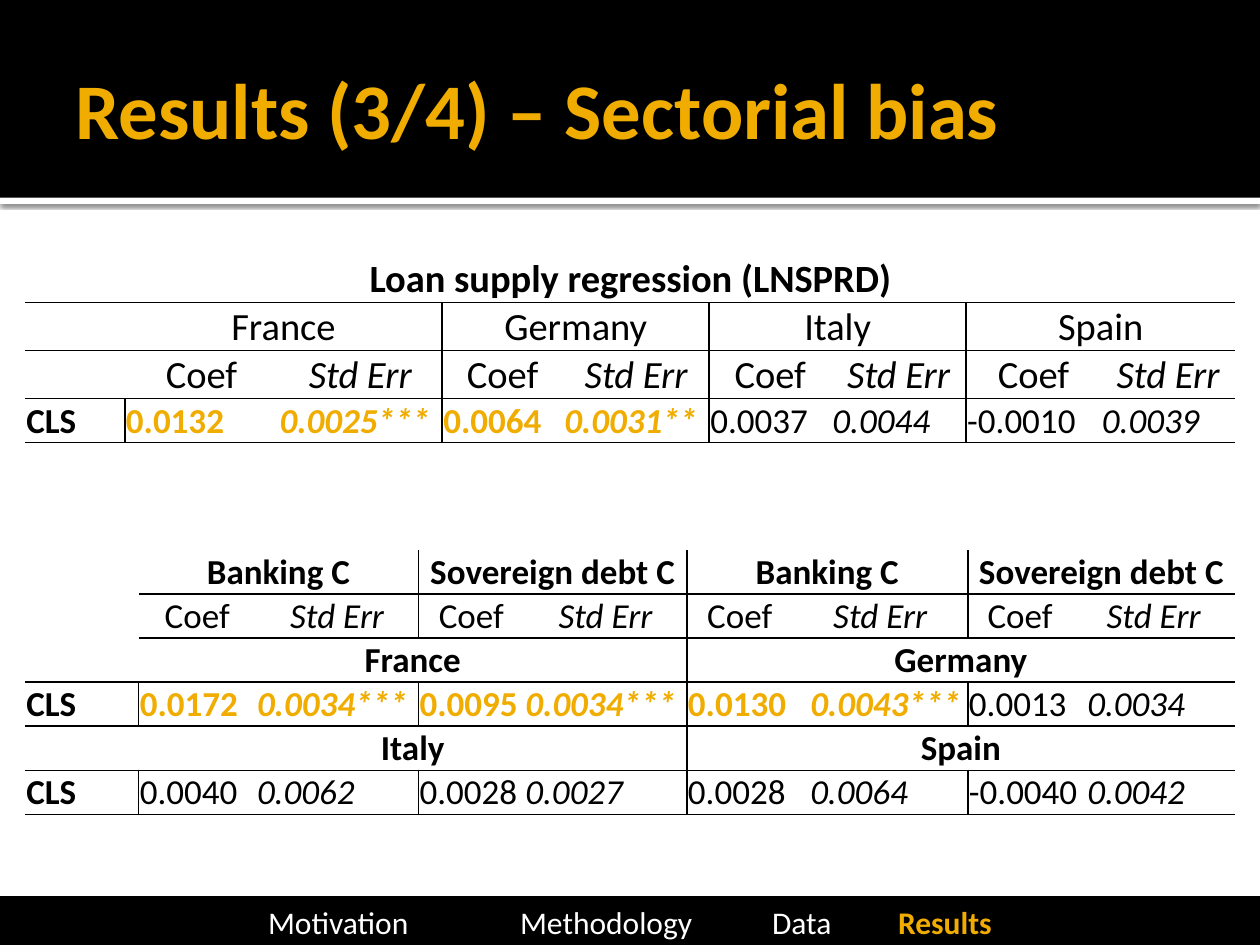
from pptx import Presentation
from pptx.dml.color import RGBColor
from pptx.enum.shapes import MSO_SHAPE
from pptx.enum.text import MSO_ANCHOR, PP_ALIGN
from pptx.oxml import parse_xml
from pptx.oxml.ns import nsdecls
from pptx.util import Pt

RECTANGLE = MSO_SHAPE.RECTANGLE
MIDDLE, BOTTOM = MSO_ANCHOR.MIDDLE, MSO_ANCHOR.BOTTOM
LEFT, CENTER = PP_ALIGN.LEFT, PP_ALIGN.CENTER

THEME = {
    "font": "Calibri", "black": "000000", "white": "FFFFFF", "accent": "F0AD00",
    "title": 45, "heading": 22, "body": 20, "footer": 18, "rule": 1,
}
NO_STYLE = "{2D5ABB26-0587-4C30-8999-92F81FD0307C}"

TITLE = "Results (3/4) – Sectorial bias"
SECTIONS = ["Motivation", "Methodology", "Data", "Results"]
MEASURES = [("Coef", ""), ("Std Err", "i")] * 4
CRISES = [("Banking C", "b"), ("Sovereign debt C", "b")] * 2

# Style letters: b bold, i italic, a accent colour.
LOAN_SUPPLY = {
    "left": 14.4, "top": 145.6,
    "widths": [56.9, 87.8, 93.6, 69.1, 83.5, 69.8, 77, 77, 77],
    "heights": [27.4, 27.4, 27.4, 25.2],
    "sizes": ["heading", "heading", "heading", "body"],
    "groups": [1, 3, 5, 7], "corner_rows": 0,
    "rows": [
        ([9], [("Loan supply regression (LNSPRD)", "b")]),
        ([1, 2, 2, 2, 2], [("", ""), ("France", ""), ("Germany", ""), ("Italy", ""), ("Spain", "")]),
        ([1] * 9, [("", "")] + MEASURES),
        ([1] * 9, [("CLS", "b"), ("0.0132", "ba"), ("0.0025***", "bia"),
                   ("0.0064", "ba"), ("0.0031**", "bia"), ("0.0037", ""),
                   ("0.0044", "i"), ("-0.0010", ""), ("0.0039", "i")]),
    ],
}
COUNTRY_SPANS = [1, 4, 6]
VALUE_SPANS = [1, 1, 1, 1, 1, 2, 1, 2, 1]
CRISIS_PERIODS = {
    "left": 14.4, "top": 314.2,
    "widths": [64.8, 67, 92.9, 60.5, 92.9, 60.5, 9.4, 90.7, 59.8, 7.9, 85],
    "heights": [25.2] * 6,
    "sizes": ["body"] * 6,
    "groups": [1, 3, 5, 8], "corner_rows": 2,
    "rows": [
        ([1, 2, 2, 3, 3], [("", "")] + CRISES),
        ([1, 1, 1, 1, 1, 1, 2, 1, 2], [("", "")] + MEASURES),
        (COUNTRY_SPANS, [("", ""), ("France", "b"), ("Germany", "b")]),
        (VALUE_SPANS, [("CLS", "b"), ("0.0172", "ba"), ("0.0034***", "bia"),
                       ("0.0095", "ba"), ("0.0034***", "bia"), ("0.0130", "ba"),
                       ("0.0043***", "bia"), ("0.0013", ""), ("0.0034", "i")]),
        (COUNTRY_SPANS, [("", ""), ("Italy", "b"), ("Spain", "b")]),
        (VALUE_SPANS, [("CLS", "b"), ("0.0040", ""), ("0.0062", "i"),
                       ("0.0028", ""), ("0.0027", "i"), ("0.0028", ""),
                       ("0.0064", "i"), ("-0.0040", ""), ("0.0042", "i")]),
    ],
}


def style_run(run, size, style="", color="black"):
    """Apply theme font, size, colour and style letters to a run."""
    run.font.name = THEME["font"]
    run.font.size = Pt(THEME[size])
    run.font.bold = "b" in style
    run.font.italic = "i" in style
    run.font.color.rgb = RGBColor.from_string(THEME["accent" if "a" in style else color])


def add_band(slide, top, height, color):
    """Add a full-width rectangle without outline or shadow."""
    band = slide.shapes.add_shape(RECTANGLE, 0, Pt(top), Pt(720), Pt(height))
    band.shadow.inherit = False
    band.fill.solid()
    band.fill.fore_color.rgb = RGBColor.from_string(THEME[color])
    band.line.fill.background()
    return band


def add_header(slide):
    """Add the title band with its shadowed white edge."""
    edge = add_band(slide, 113, 3.6, "white")
    effects = edge.element.spPr.find("{*}effectLst")
    effects.append(parse_xml(
        f'<a:outerShdw {nsdecls("a")} blurRad="{Pt(2.5)}" dist="{Pt(0.8)}" dir="5400000">'
        f'<a:srgbClr val="{THEME["black"]}"><a:alpha val="60000"/></a:srgbClr></a:outerShdw>'))
    add_band(slide, 0, 113, "black")
    title = slide.shapes.add_textbox(Pt(36), Pt(12.2), Pt(648), Pt(98.6)).text_frame
    title.word_wrap = True
    title.vertical_anchor = MIDDLE
    title.margin_right = Pt(3.6)
    title.text = TITLE
    style_run(title.paragraphs[0].runs[0], "title", "ba")


def add_footer(slide):
    """Add the section bar with the current section highlighted."""
    footer = add_band(slide, 514, 26, "black")
    footer.line.color.rgb = RGBColor.from_string(THEME["black"])
    footer.line.width = Pt(3.78)
    footer.text_frame.vertical_anchor = MIDDLE
    paragraph = footer.text_frame.paragraphs[0]
    paragraph.alignment = CENTER
    paragraph.text = "".join(f"{section}\t\t" for section in SECTIONS[:-1])
    style_run(paragraph.runs[0], "footer", color="white")
    current = paragraph.add_run()
    current.text = SECTIONS[-1]
    style_run(current, "footer", "ba")


def set_borders(cell, sides):
    """Draw the given sides of a cell and clear the others."""
    properties = cell._tc.get_or_add_tcPr()
    for index, side in enumerate("LRTB"):
        fill = (f'<a:solidFill><a:srgbClr val="{THEME["black"]}"/></a:solidFill>'
                if side in sides else "<a:noFill/>")
        properties.insert(index, parse_xml(
            f'<a:ln{side} {nsdecls("a")} w="{Pt(THEME["rule"])}">{fill}</a:ln{side}>'))


def add_results(slide, data):
    """Add one regression table with merged headings and ruled groups."""
    widths, heights, rows = data["widths"], data["heights"], data["rows"]
    table = slide.shapes.add_table(
        len(rows), len(widths), Pt(data["left"]), Pt(data["top"]),
        Pt(sum(widths)), Pt(sum(heights))).table
    table.first_row = table.horz_banding = False
    table._tbl.tblPr.find("{*}tableStyleId").text = NO_STYLE
    for column, width in zip(table.columns, widths):
        column.width = Pt(width)
    for row, height in zip(table.rows, heights):
        row.height = Pt(height)
    for r, (spans, entries) in enumerate(rows):
        is_values = entries[0][0] == "CLS"
        starts = [sum(spans[:n]) for n in range(len(spans))]
        ruled = {c for c in starts if c in data["groups"] and (c > 1 or is_values)}
        for c in range(len(widths)):
            cell = table.cell(r, c)
            cell.fill.background()
            cell.vertical_anchor = BOTTOM
            cell.margin_left = cell.margin_right = cell.margin_top = Pt(0.7)
            cell.margin_bottom = 0
            in_corner = c == 0 and r < data["corner_rows"]
            below_rule = r > 0 and not (c == 0 and r <= data["corner_rows"])
            set_borders(cell, ("L" if c in ruled else "") + ("R" if c + 1 in ruled else "")
                        + ("T" if below_rule else "") + ("" if in_corner else "B"))
        for c, span, (label, style) in zip(starts, spans, entries):
            cell = table.cell(r, c)
            if span > 1:
                cell.merge(table.cell(r, c + span - 1))
            if label:
                cell.text_frame.text = label
                paragraph = cell.text_frame.paragraphs[0]
                paragraph.alignment = LEFT if is_values else CENTER
                style_run(paragraph.runs[0], data["sizes"][r], style)
    if data["corner_rows"]:
        table.cell(0, 0).merge(table.cell(data["corner_rows"] - 1, 0))


def main():
    """Build the results slide."""
    deck = Presentation()
    deck.slide_width, deck.slide_height = Pt(720), Pt(540)
    slide = deck.slides.add_slide(deck.slide_layouts[6])
    add_header(slide)
    for data in (LOAN_SUPPLY, CRISIS_PERIODS):
        add_results(slide, data)
    add_footer(slide)
    deck.save("out.pptx")


if __name__ == "__main__":
    main()
